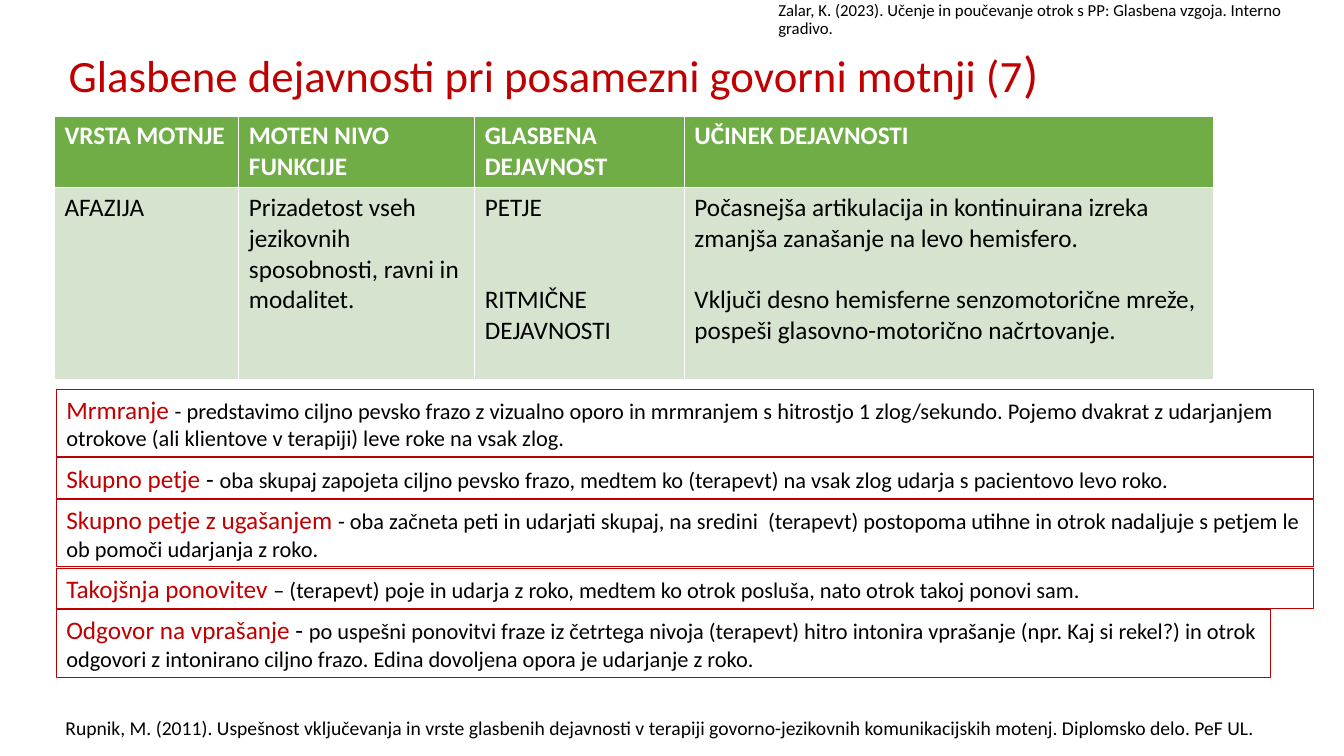
import pptx
import pptx.dml.color
import pptx.enum.shapes
import pptx.enum.text
import pptx.util

RGB = pptx.dml.color.RGBColor
RED = RGB(0xC0, 0x00, 0x00)
BLACK = RGB(0x00, 0x00, 0x00)
WHITE = RGB(0xFF, 0xFF, 0xFF)
GREEN = RGB(0x70, 0xAD, 0x47)
PALE_GREEN = RGB(0xD5, 0xE3, 0xCF)
ANCHOR = pptx.enum.text.MSO_ANCHOR
LEFT_ALIGN = pptx.enum.text.PP_ALIGN.LEFT

# Grid of the slide
COLUMNS, ROWS = 40, 30

HEADERS = ["VRSTA MOTNJE", "MOTEN NIVO FUNKCIJE",
           "GLASBENA DEJAVNOST", "UČINEK DEJAVNOSTI"]
APHASIA = [
    ["AFAZIJA"],
    ["Prizadetost vseh jezikovnih sposobnosti, ravni in modalitet."],
    ["PETJE", "RITMIČNE DEJAVNOSTI"],
    ["Počasnejša artikulacija in kontinuirana izreka zmanjša zanašanje "
     "na levo hemisfero.",
     "Vključi desno hemisferne senzomotorične mreže, pospeši "
     "glasovno-motorično načrtovanje."],
]
PARAGRAPH_GAPS = [0, 0, 44, 22]

# Width, height, name, dash, dash size, description
STEPS = [
    (37.42, 2.68, "Mrmranje ", "- ", 16,
     "predstavimo ciljno pevsko frazo z vizualno oporo in mrmranjem s "
     "hitrostjo 1 zlog/sekundo. Pojemo dvakrat z udarjanjem otrokove "
     "(ali klientove v terapiji) leve roke na vsak zlog."),
    (37.42, 1.6, "Skupno petje ", "- ", 18,
     "oba skupaj zapojeta ciljno pevsko frazo, medtem ko (terapevt) na "
     "vsak zlog udarja s pacientovo levo roko."),
    (37.42, 2.68, "Skupno petje z ugašanjem ", "- ", 16,
     "oba začneta peti in udarjati skupaj, na sredini  (terapevt) postopoma "
     "utihne in otrok nadaljuje s petjem le ob pomoči udarjanja z roko."),
    (37.42, 1.6, "Takojšnja ponovitev ", "– ", 16,
     "(terapevt) poje in udarja z roko, medtem ko otrok posluša, nato otrok "
     "takoj ponovi sam."),
    (36.13, 2.68, "Odgovor na vprašanje ", "- ", 18,
     "po uspešni ponovitvi fraze iz četrtega nivoja (terapevt) hitro intonira "
     "vprašanje (npr. Kaj si rekel?) in otrok odgovori z intonirano ciljno "
     "frazo. Edina dovoljena opora je udarjanje z roko."),
]
STEP_GAP = 0.05


class SlideBuilder:
    def __init__(self, prs, font="Calibri"):
        self.font = font
        self.column = prs.slide_width / COLUMNS
        self.row = prs.slide_height / ROWS
        self.slide = prs.slides.add_slide(prs.slide_layouts[5])
        self.shapes = self.slide.shapes

    def box(self, x, y, w, h):
        return (round(x * self.column), round(y * self.row),
                round(w * self.column), round(h * self.row))

    def style(self, font, size, color, bold=False):
        font.name, font.size, font.bold = self.font, pptx.util.Pt(size), bold
        font.color.rgb = color

    def runs(self, p, parts):
        for text, size, color in parts:
            r = p.add_run()
            r.text = text
            self.style(r.font, size, color)

    def title(self, at, parts):
        sp = self.shapes.title
        sp.left, sp.top, sp.width, sp.height = self.box(*at)
        tf = sp.text_frame
        tf.word_wrap, tf.vertical_anchor = True, ANCHOR.MIDDLE
        tf.auto_size = pptx.enum.text.MSO_AUTO_SIZE.NONE
        p = tf.paragraphs[0]
        p.alignment, p.line_spacing = LEFT_ALIGN, 0.9
        self.runs(p, parts)

    def note(self, at, text, size, wrap=True, anchor=ANCHOR.TOP, spacing=1.0):
        tf = self.shapes.add_textbox(*self.box(*at)).text_frame
        tf.word_wrap, tf.vertical_anchor = wrap, anchor
        p = tf.paragraphs[0]
        p.text, p.line_spacing = text, spacing
        self.style(p.font, size, BLACK)

    def framed_text(self, at, parts):
        sp = self.shapes.add_shape(
            pptx.enum.shapes.MSO_SHAPE.RECTANGLE, *self.box(*at))
        sp.shadow.inherit = False
        sp.fill.background()
        sp.line.color.rgb, sp.line.width = RED, pptx.util.Pt(0.75)
        tf = sp.text_frame
        tf.word_wrap, tf.vertical_anchor = True, ANCHOR.TOP
        p = tf.paragraphs[0]
        p.alignment = LEFT_ALIGN
        self.runs(p, parts)

    def cell(self, cell, paragraphs, fill, color, bold=False, gap=0):
        cell.fill.solid()
        cell.fill.fore_color.rgb = fill
        tf = cell.text_frame
        for i, text in enumerate(paragraphs):
            p = tf.add_paragraph() if i else tf.paragraphs[0]
            p.text = text
            p.space_before = pptx.util.Pt(gap if i else 0)
            self.style(p.font, 18, color, bold)

    def table(self, x, y, widths, heights):
        at = self.box(x, y, sum(widths), sum(heights))
        table = self.shapes.add_table(len(heights), len(widths), *at).table
        for column, w in zip(table.columns, widths):
            column.width = round(w * self.column)
        for row, h in zip(table.rows, heights):
            row.height = round(h * self.row)
        return table


def main():
    prs = pptx.Presentation()
    prs.slide_width = pptx.util.Inches(13.33)
    prs.slide_height = pptx.util.Inches(7.5)
    s = SlideBuilder(prs)

    # Title
    s.title((1.74, 1.72, 34.5, 2.6), [
        ("Glasbene dejavnosti pri posamezni govorni motnji (7", 32, RED),
        (")", 36, RED)])

    # Table of the disorder
    table = s.table(1.62, 4.6, [5.49, 7.02, 6.24, 15.75], [2.76, 7.64])
    for i, (header, body, gap) in enumerate(
            zip(HEADERS, APHASIA, PARAGRAPH_GAPS)):
        s.cell(table.cell(0, i), [header], GREEN, WHITE, bold=True)
        s.cell(table.cell(1, i), body, PALE_GREEN, BLACK, gap=gap)

    # Stacked therapy steps
    y = 15.44
    for w, h, name, dash, dash_size, text in STEPS:
        s.framed_text((1.68, y, w, h), [
            (name, 18, RED), (dash, dash_size, BLACK), (text, 16, BLACK)])
        y += h + STEP_GAP

    # Sources
    s.note((1.65, 28.2, 36.22, 1.36),
           "Rupnik, M. (2011). Uspešnost vključevanja in vrste glasbenih "
           "dejavnosti v terapiji govorno-jezikovnih komunikacijskih motenj. "
           "Diplomsko delo. PeF UL.", 14, wrap=False)
    s.note((22.87, 0, 17.16, 1.6),
           "Zalar, K. (2023). Učenje in poučevanje otrok s PP: Glasbena "
           "vzgoja. Interno gradivo.", 12, anchor=ANCHOR.MIDDLE, spacing=0.9)

    prs.save("out.pptx")


if __name__ == "__main__":
    main()
